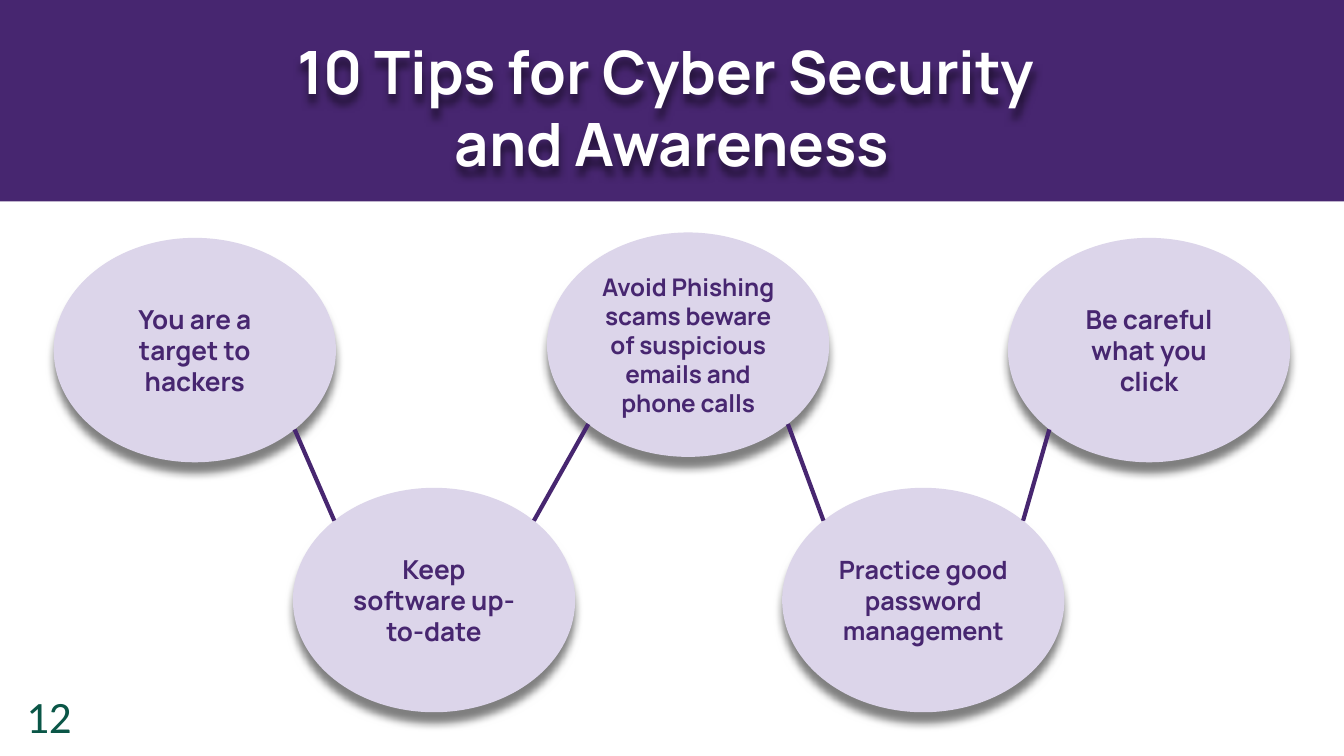
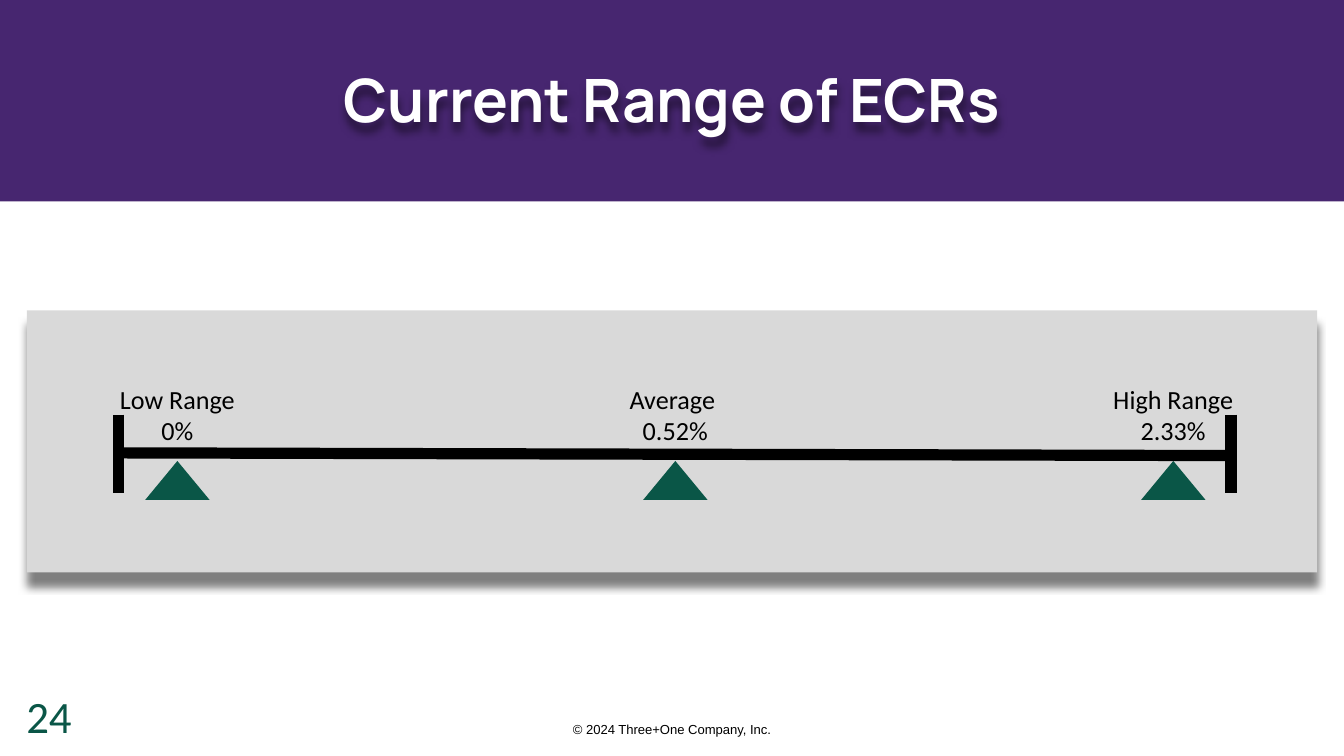
import math
from dataclasses import dataclass

import pptx
import pptx.dml.color
import pptx.enum.shapes
import pptx.enum.text
import pptx.oxml
import pptx.oxml.ns
import pptx.util

SCALE = 4572  # EMU in one px, 200 px to the inch
WIDE, HIGH = 2000, 1125
KIND = pptx.enum.shapes.MSO_SHAPE
ANCHOR = pptx.enum.text.MSO_ANCHOR
CENTER = pptx.enum.text.PP_ALIGN.CENTER


@dataclass(frozen=True)
class Theme:
    purple: str = "472670"
    lilac: str = "DCD5EA"
    green: str = "0A5647"
    gray: str = "D9D9D9"
    black: str = "000000"
    white: str = "FFFFFF"
    head: str = "Manrope"
    body: str = "Calibri"
    legal: str = "Arial"
    title: float = 32
    number: float = 24
    label: float = 14
    small: float = 7
    link: float = 2.25
    rail: float = 6


THEME = Theme()
TITLE = dict(name=THEME.head, size=THEME.title, bold=True, color=THEME.white)
NUMBER = dict(name=THEME.body, size=THEME.number, color=THEME.green)
TIP = dict(name=THEME.head, size=THEME.label, bold=True, color=THEME.purple)
LABEL = dict(name=THEME.body, size=THEME.label, color=THEME.black)
LEGAL = dict(name=THEME.legal, size=THEME.small, color=THEME.black)


def px(*vals):
    return [pptx.util.Emu(round(val * SCALE)) for val in vals]


def rgb(code):
    return pptx.dml.color.RGBColor.from_string(code)


def shade(shape, alpha, blur, dist):
    """Cast a soft black shadow straight down; blur and dist in points."""
    shape.shadow.inherit = False
    effects = shape._element.spPr.find(pptx.oxml.ns.qn("a:effectLst"))
    effects.append(pptx.oxml.parse_xml(
        f'<a:outerShdw {pptx.oxml.ns.nsdecls("a")} '
        f'blurRad="{pptx.util.Pt(blur)}" dist="{pptx.util.Pt(dist)}" '
        f'dir="5400000" algn="t" rotWithShape="0"><a:srgbClr val="{THEME.black}">'
        f'<a:alpha val="{alpha * 1000}"/></a:srgbClr></a:outerShdw>'))


def write(shape, lines, style, anchor=ANCHOR.TOP):
    frame = shape.text_frame
    setup = dict(word_wrap=True, vertical_anchor=anchor)
    for side in ("left", "top", "right", "bottom"):
        setup[f"margin_{side}"] = px(20)[0]
    for key, val in setup.items():
        setattr(frame, key, val)
    for num, line in enumerate(lines):
        para = frame.add_paragraph() if num else frame.paragraphs[0]
        para.alignment = CENTER
        run = para.add_run()
        run.text = line
        for key, val in style.items():
            if key == "color":
                run.font.color.rgb = rgb(val)
            else:
                setattr(run.font, key, pptx.util.Pt(val) if key == "size" else val)


def text(slide, box, lines, style, anchor=ANCHOR.TOP):
    shape = slide.shapes.add_textbox(*px(*box))
    write(shape, lines, style, anchor)
    return shape


def solid(slide, kind, box, fill):
    shape = slide.shapes.add_shape(kind, *px(*box))
    shape.shadow.inherit = False
    shape.fill.solid()
    shape.fill.fore_color.rgb = rgb(fill)
    shape.line.fill.background()
    return shape


def line(slide, start, end, color, width):
    link = slide.shapes.add_connector(
        pptx.enum.shapes.MSO_CONNECTOR.STRAIGHT, *px(*start, *end))
    link.line.color.rgb = rgb(color)
    link.line.width = pptx.util.Pt(width)
    link._element.spPr.append(pptx.oxml.parse_xml(
        f'<a:effectLst {pptx.oxml.ns.nsdecls("a")}/>'))


def page(deck, title, top, number):
    """Add a slide with its band, title and number."""
    slide = deck.slides.add_slide(deck.slide_layouts[6])
    solid(slide, KIND.RECTANGLE, (0, 0, WIDE, 300), THEME.purple)
    text(slide, (0, HIGH - 376, 146, 376), [number], NUMBER, ANCHOR.BOTTOM)
    head = text(slide, (168, top, 1664, 172), title, TITLE)
    shade(head, 50, 4.5, 4.5)
    return slide


def chain(slide, box, tips):
    """Place tips as ovals, high and low by turns, linked corner to corner."""
    left, top, wide, high = box
    oval = 420, 334
    reach = [side / 2 * math.cos(math.pi / 4) for side in oval]
    hubs = []
    for shift, drop, note, size in tips:
        spot = left + shift, top + drop
        shape = solid(slide, KIND.OVAL, (*spot, *oval), THEME.lilac)
        shade(shape, 50, 4.5, 6)
        write(shape, [note], {**TIP, "size": size}, ANCHOR.MIDDLE)
        hubs.append([at + side / 2 for at, side in zip(spot, oval)])
    for one, two in zip(hubs, hubs[1:]):
        fall = math.copysign(reach[1], two[1] - one[1])
        line(slide, (one[0] + reach[0], one[1] + fall),
             (two[0] - reach[0], two[1] - fall), THEME.purple, THEME.link)


def gauge(slide, box, marks):
    """Draw a panel with a scale and evenly spaced marks."""
    left, top, wide, high = box
    panel = solid(slide, KIND.RECTANGLE, box, THEME.gray)
    shade(panel, 49, 4.5, 7.5)
    first, gap = left + 224, 741
    for num, lines in enumerate(marks):
        mid = first + num * gap
        text(slide, (mid - 170, top + 88, 340, 134), lines, LABEL)
        solid(slide, KIND.ISOSCELES_TRIANGLE,
              (mid - 48, top + 224, 96, 58), THEME.green)
    ends = left + 136, left + wide - 128
    line(slide, (ends[0], top + 212), (ends[1], top + 216),
         THEME.black, THEME.rail)
    for end in ends:
        line(slide, (end, top + 155), (end, top + 272), THEME.black, THEME.rail)


def main():
    deck = pptx.Presentation()
    deck.slide_width, deck.slide_height = px(WIDE, HIGH)

    slide = page(deck, ["10 Tips for Cyber Security ", "and Awareness"], 32, "12")
    chain(slide, (80, 346, 1840, 714), [
        (0, 8, "You are a target to hackers", 14),
        (356, 380, "Keep software up-to-date", 14),
        (734, 0, "Avoid Phishing scams beware of suspicious emails "
                 "and phone calls", 13),
        (1084, 380, "Practice good password management", 13.5),
        (1420, 8, "Be careful what you click", 14),
    ])

    slide = page(deck, ["Current Range of ECRs"], 74, "24")
    gauge(slide, (40, 462, 1920, 390), [
        ("Low Range", "0%"), ("Average ", "0.52%"), ("High Range", "2.33%")])
    text(slide, (804, 1062, 392, 63), ["© 2024 Three+One Company, Inc."], LEGAL)

    deck.save("out.pptx")


if __name__ == "__main__":
    main()
